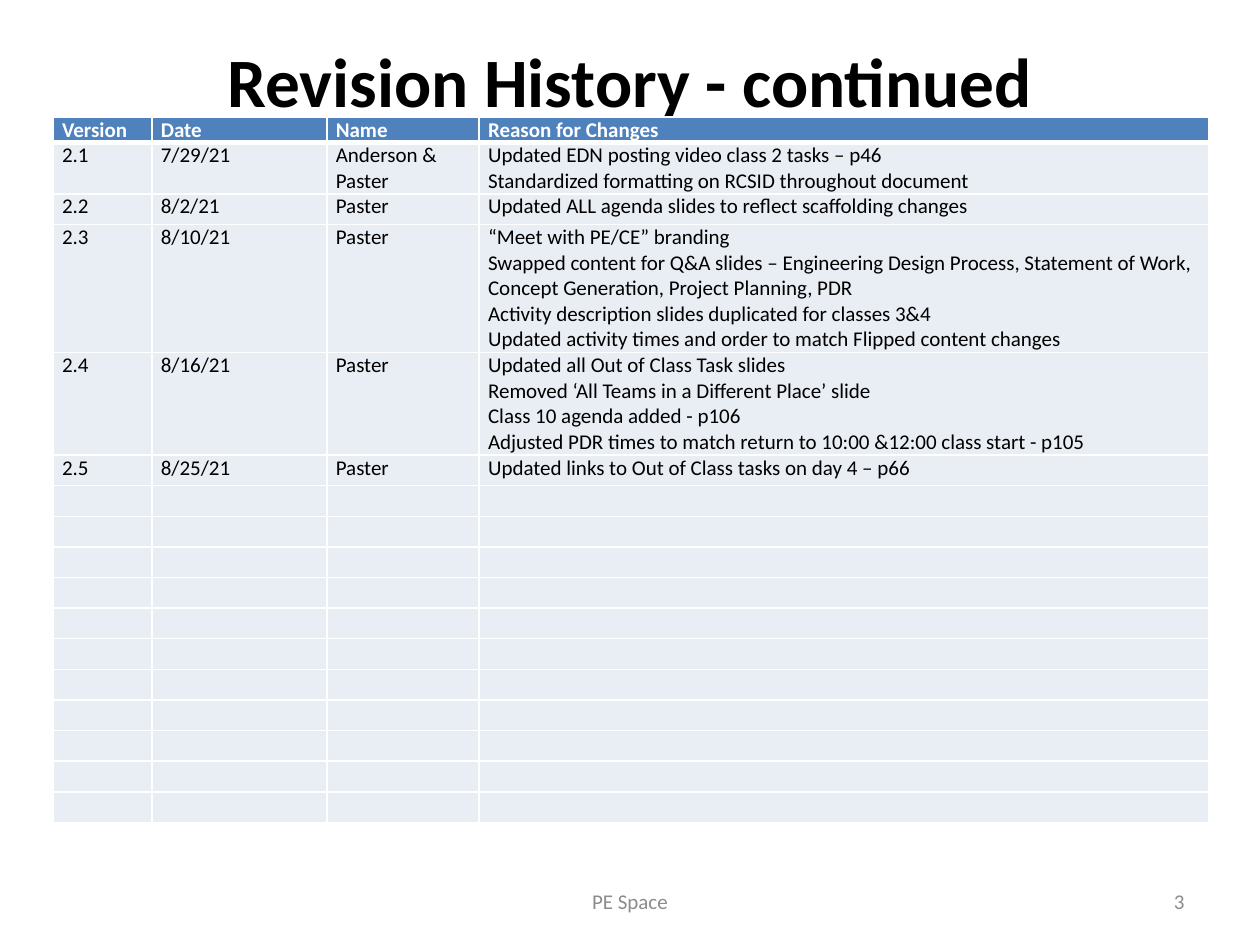
from lxml import etree
from pptx import Presentation
from pptx.dml.color import RGBColor
from pptx.enum.text import MSO_ANCHOR, PP_ALIGN
from pptx.oxml.ns import qn
from pptx.util import Pt

TOP, MID = MSO_ANCHOR.TOP, MSO_ANCHOR.MIDDLE
LEFT, MIDDLE, RIGHT = PP_ALIGN.LEFT, PP_ALIGN.CENTER, PP_ALIGN.RIGHT
COLORS = {"black": "000000", "white": "FFFFFF", "gray": "8C8C8C",
          "head": "4F81BD", "body": "E9EDF4"}


def write(frame, lines, align, size, color, bold=False):
    frame.text = "\n".join(lines)
    form = {"name": "Calibri", "size": Pt(size), "bold": bold}
    for para in frame.paragraphs:
        para.alignment = align
        for run in para.runs:
            for key, value in form.items():
                setattr(run.font, key, value)
            run.font.color.rgb = RGBColor.from_string(COLORS[color])
        etree.SubElement(para._p, qn("a:endParaRPr"), sz=str(int(size * 100)))


def border(cell, side, width):
    line = etree.SubElement(cell._tc.get_or_add_tcPr(), qn("a:ln" + side),
                            w=str(Pt(width)))
    fill = etree.SubElement(line, qn("a:solidFill"))
    etree.SubElement(fill, qn("a:srgbClr"), val=COLORS["white"])


deck = Presentation()
deck.slide_width, deck.slide_height = Pt(720), Pt(540)
slide = deck.slides.add_slide(deck.slide_layouts[6])

texts = [
    ("Revision History - continued", (36, 21.6, 648, 90), TOP, MIDDLE, 39.6, "black", True),
    ("PE Space", (246, 500.5, 228, 28.75), MID, MIDDLE, 12, "gray", False),
    ("3", (516, 500.5, 168, 28.75), MID, RIGHT, 12, "gray", False),
]
for text, place, anchor, align, size, color, bold in texts:
    frame = slide.shapes.add_textbox(*map(Pt, place)).text_frame
    form = {"word_wrap": True, "vertical_anchor": anchor,
            "margin_top": 0, "margin_bottom": 0}
    for key, value in form.items():
        setattr(frame, key, value)
    write(frame, [text], align, size, color, bold)

rows = [
    ("Version", "Date", "Name", ["Reason for Changes"]),
    ("2.1", "7/29/21", "Anderson & Paster", [
        "Updated EDN posting video class 2 tasks – p46",
        "Standardized formatting on RCSID throughout document"]),
    ("2.2", "8/2/21", "Paster", [
        "Updated ALL agenda slides to reflect scaffolding changes"]),
    ("2.3", "8/10/21", "Paster", [
        "“Meet with PE/CE” branding",
        "Swapped content for Q&A slides – Engineering Design Process, "
        "Statement of Work, Concept Generation, Project Planning, PDR",
        "Activity description slides duplicated for classes 3&4",
        "Updated activity times and order to match Flipped content changes"]),
    ("2.4", "8/16/21", "Paster", [
        "Updated all Out of Class Task slides",
        "Removed ‘All Teams in a Different Place’ slide",
        "Class 10 agenda added - p106",
        "Adjusted PDR times to match return to 10:00 &12:00 class start - p105"]),
    ("2.5", "8/25/21", "Paster", [
        "Updated links to Out of Class tasks on day 4 – p66"]),
] + [("", "", "", [""])] * 11
widths = [56.5, 100, 87, 416.75]
heights = [14.6, 29.3, 17.5, 73.2, 58.6] + [17.5] * 12

table = slide.shapes.add_table(len(rows), len(widths), Pt(30.25), Pt(66.9),
                               Pt(sum(widths)), Pt(sum(heights))).table
table.horz_banding = False
for col, width in zip(table.columns, widths):
    col.width = Pt(width)
for r, (row, height) in enumerate(zip(rows, heights)):
    table.rows[r].height = Pt(height)
    head = r == 0
    for c, item in enumerate(row):
        cell = table.cell(r, c)
        form = {"margin_left": Pt(5.2), "margin_right": Pt(5.2),
                "margin_top": 0, "margin_bottom": 0, "vertical_anchor": TOP}
        for key, value in form.items():
            setattr(cell, key, value)
        for side in "LRTB":
            thick = (r, side) in [(0, "B"), (1, "T")]
            border(cell, side, 3 if thick else 1)
        cell.fill.solid()
        cell.fill.fore_color.rgb = RGBColor.from_string(COLORS["head" if head else "body"])
        lines = item if isinstance(item, list) else [item]
        write(cell.text_frame, lines, LEFT, 12, "white" if head else "black", head)

deck.save("out.pptx")
